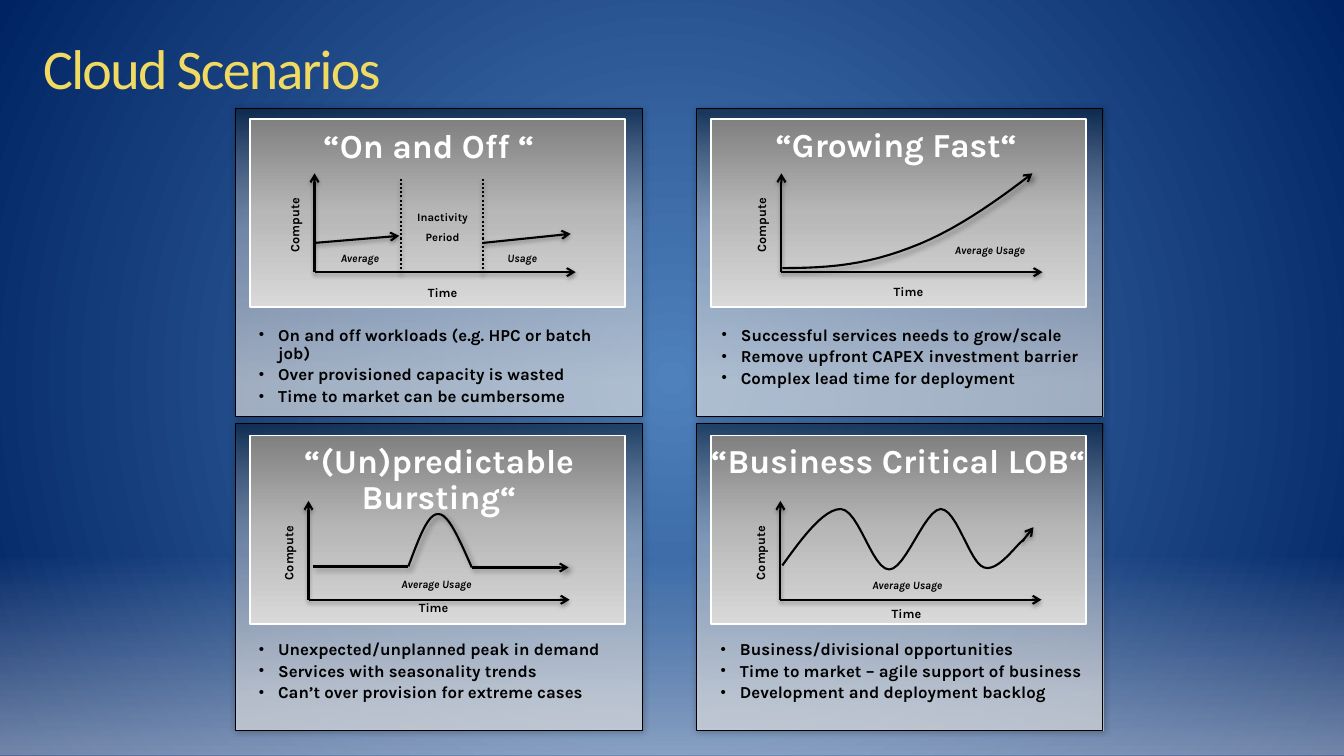
"""Build the Cloud Scenarios slide: four cards, each with a usage sketch."""
from lxml import etree
from pptx import Presentation
from pptx.dml.color import RGBColor
from pptx.enum.dml import MSO_LINE
from pptx.enum.shapes import MSO_CONNECTOR, MSO_SHAPE
from pptx.enum.text import MSO_ANCHOR, PP_ALIGN
from pptx.oxml.ns import qn
from pptx.util import Inches, Pt

STRAIGHT = MSO_CONNECTOR.STRAIGHT
RECT, ROUND = MSO_SHAPE.RECTANGLE, MSO_SHAPE.ROUNDED_RECTANGLE
DOTS = MSO_LINE.ROUND_DOT
LEFT, MID = PP_ALIGN.LEFT, PP_ALIGN.CENTER
TOP, CENTER = MSO_ANCHOR.TOP, MSO_ANCHOR.MIDDLE

HUE = {"ink": "000000", "white": "FFFFFF", "gold": "F1DA61", "sky": "4F81BD",
       "navy": "002463", "night": "041E3A", "dim": "808080", "ash": "B7B7B7",
       "pale": "D9D9D9"}
SKY = [(0, "sky", 100), (100, "navy", 100)]
GLOW = [(0, "white", 0), (46, "white", 20), (100, "white", 45)]
PANEL = [(0, "night", 52), (39, "white", 37), (88, "white", 58)]
PLOT = [(0, "dim", 100), (50, "ash", 100), (100, "pale", 100)]
HALO, DROP, CAST = (40, 5, 0, 0), (35, 3.1, 1.8, 90), (40, 4, 3, 45)

CARDS = [
    {"card": (2.34, 1.08), "plot": (2.48, 1.18), "axis": (3.12, 2.7),
     "name": "“On and Off “", "head": (2.45, 1.24, 3.61), "time": (4.03, 2.82),
     "list": (2.47, 3.19, 3.68, 0.91),
     "items": ["On and off workloads (e.g. HPC or batch job)",
               "Over provisioned capacity is wasted",
               "Time to market can be cumbersome"],
     "tags": [("Average", 3.1, 2.49), ("Usage", 4.71, 2.49)],
     "gap": (["Inactivity", "Period"], (3.93, 2.06, 0.92, 0.41)),
     "lines": [((3.12, 2.41), (3.96, 2.34), True, False, DROP),
               ((4.79, 2.41), (5.66, 2.32), True, False, DROP),
               ((3.98, 2.71), (3.98, 1.78), False, True, DROP),
               ((4.79, 2.71), (4.79, 1.78), False, True, DROP)]},
    {"card": (6.91, 1.08), "plot": (7.05, 1.18), "axis": (7.75, 2.7),
     "name": "“Growing Fast“", "head": (7.33, 1.23, 3.12), "time": (8.65, 2.81),
     "list": (7.06, 3.19, 3.87, 0.73),
     "items": ["Successful services needs to grow/scale",
               "Remove upfront CAPEX investment barrier",
               "Complex lead time for deployment"],
     "tags": [("Average Usage", 9.35, 2.41)],
     "curve": ([(7.76, 2.66), (8.25, 2.66), (8.6, 2.62), (9.02, 2.46),
                (9.43, 2.31), (9.84, 2.03), (10.24, 1.72)], True, CAST)},
    {"card": (2.34, 4.2), "plot": (2.48, 4.32), "axis": (3.06, 5.95),
     "name": "“(Un)predictable Bursting“", "head": (2.51, 4.36, 3.69),
     "time": (3.94, 5.94), "list": (2.47, 6.31, 4, 0.73),
     "items": ["Unexpected/unplanned peak in demand",
               "Services with seasonality trends",
               "Can’t over provision for extreme cases"],
     "tags": [("Average Usage", 3.86, 5.73)],
     "lines": [((4.68, 5.63), (5.64, 5.63), True, False, CAST),
               ((3.1, 5.62), (4.05, 5.62), False, False, CAST)],
     "curve": ([(4.05, 5.62), (4.15, 5.36), (4.24, 5.09), (4.35, 5.1),
                (4.45, 5.1), (4.56, 5.36), (4.68, 5.63)], False, CAST)},
    {"card": (6.91, 4.2), "plot": (7.05, 4.32), "axis": (7.74, 5.95),
     "name": "“Business Critical LOB“", "head": (7.05, 4.36, 3.72),
     "time": (8.63, 6), "list": (7.05, 6.31, 4.28, 0.73),
     "items": ["Business/divisional opportunities",
               "Time to market – agile support of business",
               "Development and deployment backlog"],
     "tags": [("Average Usage", 8.53, 5.74)],
     "lines": [((10.14, 5.37), (10.25, 5.23), True, False, DROP)],
     "curve": ([(7.76, 5.61), (7.96, 5.33), (8.17, 5.05), (8.34, 5.05),
                (8.52, 5.06), (8.65, 5.65), (8.82, 5.65), (8.98, 5.65),
                (9.17, 5.06), (9.33, 5.05), (9.49, 5.05), (9.62, 5.59),
                (9.76, 5.63), (9.9, 5.68), (10.08, 5.4), (10.16, 5.35)],
               False, None)},
]

deck = Presentation()
deck.slide_width, deck.slide_height = Inches(13.33), Inches(7.5)
slide = deck.slides.add_slide(deck.slide_layouts[6])
shapes = slide.shapes


def add(up, tag, **attrs):
    return etree.SubElement(up, qn(tag), {k: str(v) for k, v in attrs.items()})


def tint(up, hue, alpha):
    add(add(up, "a:srgbClr", val=HUE[hue]), "a:alpha", val=alpha * 1000)


def paint(fill, root, stops, radial=False):
    fill.background()
    old = root.find(qn("a:noFill"))
    grad = etree.Element(qn("a:gradFill"), rotWithShape="1")
    steps = add(grad, "a:gsLst")
    for pos, hue, alpha in stops:
        tint(add(steps, "a:gs", pos=pos * 1000), hue, alpha)
    if radial:
        way = add(grad, "a:path", path="circle")
        add(way, "a:fillToRect", **dict.fromkeys("ltrb", 100000))
    else:
        add(grad, "a:lin", ang=5400000, scaled=0)
    root.replace(old, grad)


def shade(shape, cast):
    root = shape._element.spPr
    for old in root.findall(qn("a:effectLst")):
        root.remove(old)
    fx = add(root, "a:effectLst")
    if cast:
        alpha, blur, dist, angle = cast
        tint(add(fx, "a:outerShdw", blurRad=Pt(blur), dist=Pt(dist),
                 dir=angle * 60000, algn="ctr", rotWithShape=0), "ink", alpha)


def edge(shape, hue, width, cast=None, arrow=False, dots=False):
    shape.line.color.rgb = RGBColor.from_string(HUE[hue])
    shape.line.width = Pt(width)
    if dots:
        shape.line.dash_style = DOTS
    if arrow:
        add(shape.line._get_or_add_ln(), "a:tailEnd", type="arrow")
    shade(shape, cast)


def block(kind, box, stops):
    shape = shapes.add_shape(kind, *map(Inches, box))
    paint(shape.fill, shape._element.spPr, stops)
    shape.line.fill.background()
    shade(shape, None)
    return shape


def rule(start, end, arrow, dots, cast, width=1.5):
    line = shapes.add_connector(STRAIGHT, *map(Inches, start + end))
    edge(line, "ink", width, cast, arrow, dots)


def trace(knots, arrow, cast):
    path = [knots[0]]
    for i in range(0, len(knots) - 1, 3):
        for t in (n / 12 for n in range(1, 13)):
            mix = ((1 - t) ** 3, 3 * t * (1 - t) ** 2, 3 * t * t * (1 - t), t ** 3)
            path.append(tuple(sum(m * k[d] for m, k in zip(mix, knots[i:i + 4]))
                              for d in (0, 1)))
    spots = [(Inches(x), Inches(y)) for x, y in path]
    form = shapes.build_freeform(*spots[0])
    form.add_line_segments(spots[1:], close=False)
    shape = form.convert_to_shape()
    shape.fill.background()
    edge(shape, "ink", 1.5, cast, arrow)


def say(lines, box, size, hue="ink", font="Karla", bold=True, slant=False,
        align=MID, pad=(0.1, 0.05), lead=None, after=0, dots=False, anchor=TOP):
    shape = shapes.add_textbox(*map(Inches, box))
    frame = shape.text_frame
    frame.word_wrap, frame.vertical_anchor = True, anchor
    frame.margin_left = frame.margin_right = Inches(pad[0])
    frame.margin_top = frame.margin_bottom = Inches(pad[1])
    for i, line in enumerate(lines):
        para = frame.paragraphs[0] if i == 0 else frame.add_paragraph()
        para.text, para.alignment = line, align
        para.line_spacing, para.space_after = lead, Pt(after)
        if dots:
            para.space_before = Pt(2.5 if i else 0)
            props = para._p.get_or_add_pPr()
            props.set("marL", str(Inches(0.19)))
            props.set("indent", str(Inches(-0.19)))
            add(props, "a:buSzPct", val=90000)
            add(props, "a:buFont", typeface="Arial")
            add(props, "a:buChar", char="•")
        para.font.size, para.font.name = Pt(size), font
        para.font.bold, para.font.italic = bold, slant
        para.font.color.rgb = RGBColor.from_string(HUE[hue])
    return shape


back = slide.background.fill
back.background()
paint(back, slide._element.find(".//" + qn("p:bgPr")), SKY, True)
block(RECT, (0, 5.52, 13.33, 1.98), GLOW)

for card in CARDS:
    panel = block(ROUND, card["card"] + (4.03, 3.05), PANEL)
    panel.adjustments[0] = 0
    edge(panel, "ink", 0.75, HALO)
    edge(block(RECT, card["plot"] + (3.72, 1.87), PLOT), "white", 1.25)
    x, y = card["axis"]
    rule((x, y), (x, y - 0.98), True, False, DROP)
    rule((x, y), (x + 2.59, y), True, False, DROP)
    label = say(["Compute"], (x - 0.56, y - 0.57, 0.76, 0.21), 9, lead=Pt(8))
    label.rotation = 270
    say(["Time"], card["time"] + (0.72, 0.22), 9, lead=Pt(8))
    for word, left, top in card["tags"]:
        say([word], (left, top, 0.94, 0.15), 8, slant=True, pad=(0, 0))
    if "gap" in card:
        say(*card["gap"], 8, lead=Pt(8), after=6)
    say([card["name"]], card["head"] + (0.34,), 24, "white", pad=(0, 0.05), lead=0.9)
    for line in card.get("lines", []):
        rule(*line)
    if "curve" in card:
        trace(*card["curve"])
    say(card["items"], card["list"], 12, align=LEFT, lead=0.9, dots=True)

title = say(["Cloud Scenarios"], (0.33, 0.25, 12.44, 0.83), 40, "gold", "Calibri",
            bold=False, align=LEFT, anchor=CENTER)
title.text_frame.paragraphs[0].runs[0]._r.get_or_add_rPr().set("spc", "-120")
deck.save("out.pptx")
